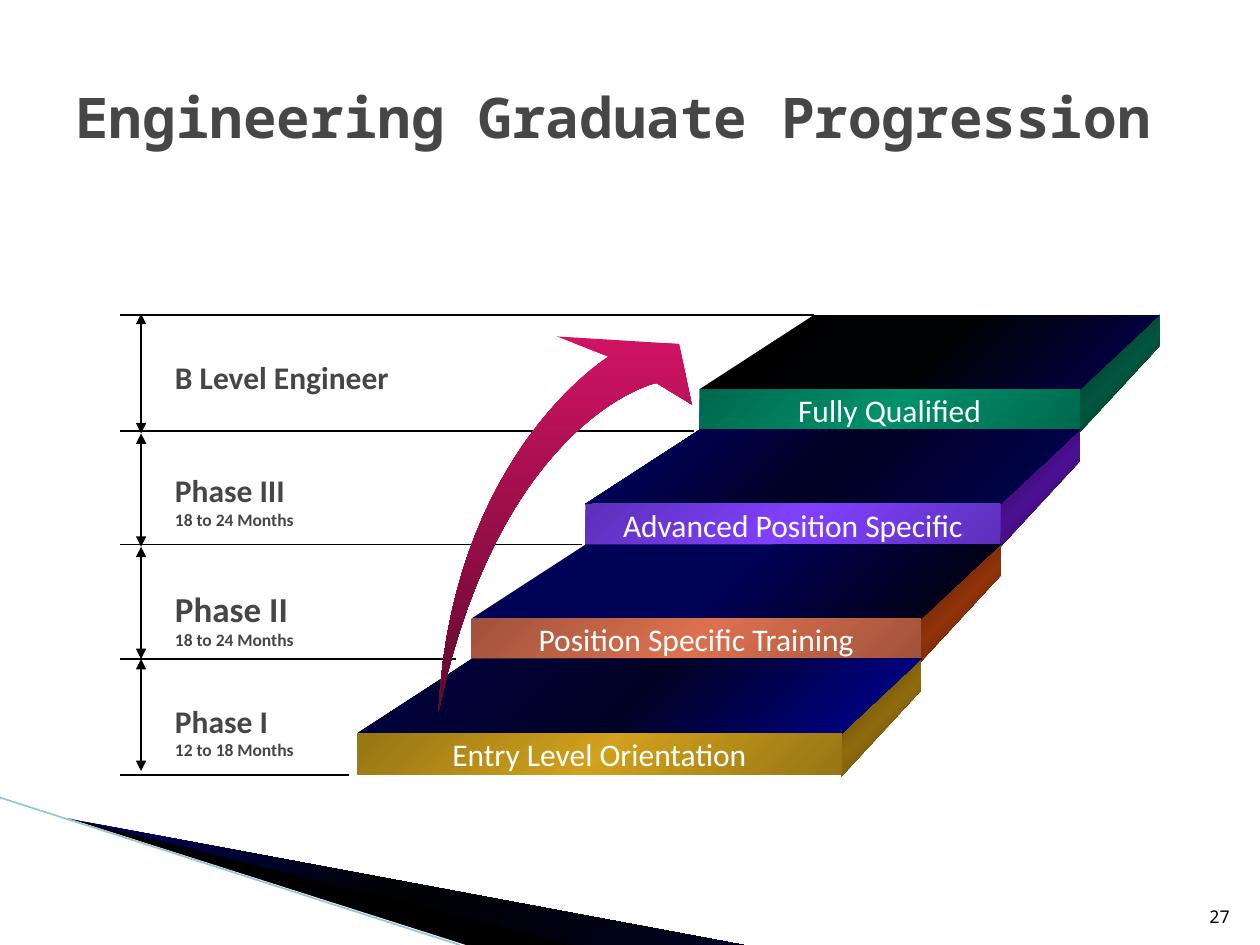
from lxml.etree import SubElement as Sub
from pptx import Presentation
from pptx.dml.color import RGBColor as Rgb
from pptx.enum.shapes import MSO_CONNECTOR as Conn, MSO_SHAPE as Shape
from pptx.enum.text import MSO_ANCHOR as Anchor, PP_ALIGN as Align
from pptx.oxml.ns import qn
from pptx.util import Inches, Pt

BLACK = Rgb(0, 0, 0)
WHITE = Rgb(255, 255, 255)
GRAY = Rgb(0x46, 0x46, 0x46)
PALE = Rgb(0xA0, 0xCB, 0xDC)
TEAL = Rgb(0x97, 0xC5, 0xD8)
PINK = Rgb(0xD1, 0x13, 0x64)
WINE = Rgb(0x61, 0x09, 0x2E)
MINT, PINE, JADE = Rgb(0, 0xCC, 0x99), Rgb(0, 0x68, 0x4D), Rgb(0, 0x90, 0x6A)
MOSS, FERN = Rgb(0, 0x28, 0x1D), Rgb(0, 0x56, 0x3F)
LILAC, PLUM, GRAPE = Rgb(0xA7, 0x7B, 0xFF), Rgb(0x5D, 0x2F, 0xB9), Rgb(0x80, 0x41, 0xFF)
NIGHT, INDIGO = Rgb(0x23, 0x07, 0x44), Rgb(0x4B, 0x10, 0x92)
PEACH, BRICK, CORAL = Rgb(0xFF, 0x99, 0x66), Rgb(0xA0, 0x52, 0x3A), Rgb(0xDC, 0x71, 0x50)
BROWN, RUST = Rgb(0x43, 0x18, 0x05), Rgb(0x90, 0x33, 0x0A)
LEMON, OCHRE, GOLD = Rgb(0xF2, 0xE1, 0x60), Rgb(0x97, 0x75, 0x14), Rgb(0xD0, 0xA1, 0x1C)
UMBER, BRONZE = Rgb(0x43, 0x32, 0x06), Rgb(0x90, 0x6B, 0x0E)

STEPS = [
    ("Fully Qualified", MINT, (PINE, JADE, PINE), (MOSS, FERN, MOSS)),
    ("Advanced Position Specific", LILAC, (PLUM, GRAPE, PLUM), (NIGHT, INDIGO, NIGHT)),
    ("Position Specific Training", PEACH, (BRICK, CORAL, BRICK), (BROWN, RUST, BROWN)),
    ("Entry Level Orientation", LEMON, (OCHRE, GOLD, OCHRE), (UMBER, BRONZE, UMBER)),
]
LABELS = [
    (2.79, 0.4, [("B Level Engineer", 18)]),
    (3.69, 0.57, [("Phase III", 18), ("18 to 24 Months", 10)]),
    (4.61, 0.6, [("Phase II", 20), ("18 to 24 Months", 10)]),
    (5.52, 0.57, [("Phase I", 18), ("12 to 18 Months", 10)]),
]
RULES = [(2.5, 6.46), (3.42, 5.51), (4.32, 4.62), (5.23, 3.62), (6.15, 2.77)]
MARKS = [2.49, 3.44, 4.34, 5.23, 6.12]


def curve(a, b, c, d, n=28):
    """Return points along a cubic curve."""
    return [
        tuple((1 - t) ** 3 * p + 3 * t * (1 - t) ** 2 * q + 3 * t * t * (1 - t) * r + t ** 3 * s
              for p, q, r, s in zip(a, b, c, d))
        for t in (i / n for i in range(n + 1))
    ]


class Deck:
    """Hold the style and the current slide, and draw each kind of element."""

    sans = "Calibri"
    mono = "Noto Sans Mono"

    def __init__(self, slide):
        self.shapes = slide.shapes

    def paint(self, shape, fill, angle=45, alpha=None):
        shape.shadow.inherit = False
        shape.line.fill.background()
        if isinstance(fill, tuple):
            shape.fill.gradient()
            shape.fill.gradient_angle = 360 - angle
            stops = shape._element.spPr.find(qn("a:gradFill")).find(qn("a:gsLst"))
            for old in list(stops):
                stops.remove(old)
            for i, color in enumerate(fill):
                stop = Sub(stops, qn("a:gs"), pos=str(100000 * i // (len(fill) - 1)))
                Sub(stop, qn("a:srgbClr"), val=str(color))
        else:
            shape.fill.solid()
            shape.fill.fore_color.rgb = fill
            if alpha:
                color = shape._element.spPr.find(qn("a:solidFill"))[0]
                Sub(color, qn("a:alpha"), val=str(alpha * 1000))

    def poly(self, points, fill, **style):
        spots = [(Inches(x), Inches(y)) for x, y in points]
        form = self.shapes.build_freeform(*spots[0])
        form.add_line_segments(spots[1:], close=True)
        self.paint(form.convert_to_shape(), fill, **style)

    def line(self, x1, y1, x2, y2, color=BLACK, width=0.75, heads=False):
        line = self.shapes.add_connector(Conn.STRAIGHT, *map(Inches, (x1, y1, x2, y2)))
        line.line.color.rgb = color
        line.line.width = Pt(width)
        props = line._element.spPr
        if heads:
            for end in ("a:headEnd", "a:tailEnd"):
                Sub(props.find(qn("a:ln")), qn(end), type="triangle")
        Sub(props, qn("a:effectLst"))

    def words(self, frame, rows, font, color, bold=False, align=Align.LEFT, anchor=Anchor.TOP):
        frame.word_wrap = True
        frame.vertical_anchor = anchor
        for i, (label, size) in enumerate(rows):
            para = frame.add_paragraph() if i else frame.paragraphs[0]
            para.text = label
            para.alignment = align
            para.font.name = font
            para.font.size = Pt(size)
            para.font.bold = bold
            para.font.color.rgb = color

    def text(self, box, rows, font, color, **style):
        frame = self.shapes.add_textbox(*map(Inches, box)).text_frame
        self.words(frame, rows, font, color, **style)

    def block(self, box, label, fill):
        rect = self.shapes.add_shape(Shape.RECTANGLE, *map(Inches, box))
        self.paint(rect, fill)
        self.words(rect.text_frame, [(label, 18)], self.sans, WHITE,
                   align=Align.CENTER, anchor=Anchor.MIDDLE)

    def step(self, i, label, top, front, side):
        y = 2.5 + 0.91 * i
        left, right = 5.55 - 0.905 * i, 8.57 - 0.63 * i
        back = right + 0.63
        edge = y + 0.59
        self.poly([(back, y), (back, y + 0.25), (right, y + 0.93), (right, edge)], side)
        self.poly([(right, edge), (left, edge), (left + 0.91, y), (back, y)], top)
        self.block((left, edge, right - left, 0.33), label, front)


def main():
    show = Presentation()
    show.slide_width, show.slide_height = Inches(10), Inches(7.5)
    deck = Deck(show.slides.add_slide(show.slide_layouts[6]))

    deck.poly([(0.55, 6.5), (5.9, 7.5), (4.56, 7.5)], PALE, alpha=40)
    deck.poly([(0.53, 6.49), (4.55, 7.5), (3.7, 7.5)], BLACK)
    deck.line(0, 6.33, 3.65, 7.5, TEAL, 0.95)
    deck.text((9.46, 7.01, 0.4, 0.4), [("27", 10)], deck.mono, BLACK,
              align=Align.RIGHT, anchor=Anchor.BOTTOM)
    deck.text((0.5, 0.3, 9, 1.25), [("Engineering Graduate Progression", 32)],
              deck.mono, GRAY, bold=True, anchor=Anchor.MIDDLE)

    for y, end in RULES:
        deck.line(end, y, 0.95, y)
    for high, low in zip(MARKS, MARKS[1:]):
        deck.line(1.12, high, 1.12, low, heads=True)
    for y, tall, rows in LABELS:
        deck.text((1.29, y, 2.55, tall), rows, deck.sans, GRAY, bold=True)
    for i, step in enumerate(STEPS):
        deck.step(i, *step)

    tail = (3.48, 5.65)
    outer = curve(tail, (3.58, 3.67), (4.74, 2.89), (4.83, 2.83))
    inner = curve((5.21, 3.04), (5.1, 3.06), (3.95, 3.43), tail)
    tip = [(4.42, 2.67), (5.39, 2.73), (5.49, 3.21)]
    deck.poly(outer + tip + inner, (PINK, WINE), angle=90)
    show.save("out.pptx")


if __name__ == "__main__":
    main()
